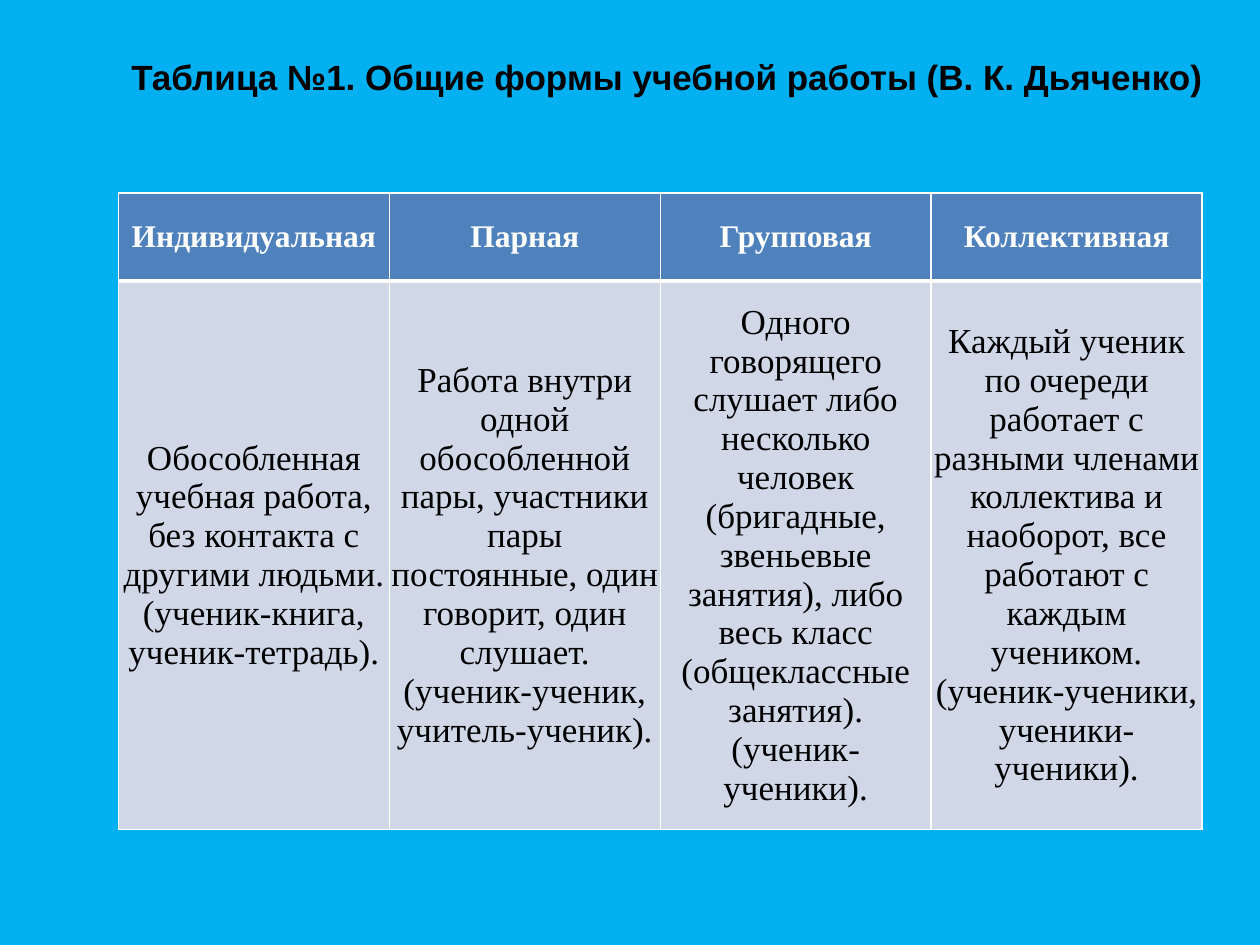
from lxml.etree import SubElement
from pptx import Presentation
from pptx.dml.color import RGBColor
from pptx.enum.text import MSO_ANCHOR, PP_ALIGN
from pptx.oxml.ns import qn
from pptx.util import Inches, Pt


def style(para, name, size, bold, color):
    para.alignment = PP_ALIGN.CENTER
    para.font.name = name
    para.font.size = Pt(size)
    para.font.bold = bold
    para.font.color.rgb = RGBColor.from_string(color)


def border(cell, side, width):
    line = SubElement(cell._tc.get_or_add_tcPr(), qn("a:" + side), w=str(Pt(width)))
    fill = SubElement(line, qn("a:solidFill"))
    SubElement(fill, qn("a:srgbClr"), val="FFFFFF")


forms = [
    ("Индивидуальная",
     "Обособленная учебная работа, без контакта с другими людьми.\n"
     "(ученик-книга, ученик-тетрадь)."),
    ("Парная",
     "Работа внутри одной обособленной пары, участники пары постоянные, "
     "один говорит, один слушает.\n(ученик-ученик, учитель-ученик)."),
    ("Групповая",
     "Одного говорящего слушает либо несколько человек (бригадные, звеньевые "
     "занятия), либо весь класс (общеклассные занятия).\n(ученик-ученики)."),
    ("Коллективная",
     "Каждый ученик по очереди работает с разными членами коллектива и наоборот, "
     "все работают с каждым учеником.\n(ученик-ученики, ученики-ученики)."),
]
looks = [
    (18, True, "FFFFFF", "4F81BD", {"lnL": 1, "lnR": 1, "lnT": 1, "lnB": 3}),
    (20, False, "000000", "D0D8E8", {"lnL": 1, "lnR": 1, "lnT": 3, "lnB": 1}),
]

deck = Presentation()
deck.slide_width = Inches(10)
deck.slide_height = Inches(7.5)
slide = deck.slides.add_slide(deck.slide_layouts[6])
slide.background.fill.solid()
slide.background.fill.fore_color.rgb = RGBColor.from_string("00B0F0")

box = slide.shapes.add_textbox(Inches(0.16), Inches(0.39), Inches(10), Inches(0.44))
title = box.text_frame
title.word_wrap = True
title.vertical_anchor = MSO_ANCHOR.MIDDLE
title.margin_left = Inches(0.37)
title.text = "Таблица №1. Общие формы учебной работы (В. К. Дьяченко)"
style(title.paragraphs[0], "Arial", 20, True, "000000")

frame = slide.shapes.add_table(
    2, len(forms), Inches(0.94), Inches(1.53), Inches(8.6), Inches(5.05))
table = frame.table
table.rows[0].height = Inches(0.7)
table.rows[1].height = Inches(4.35)

for col, texts in enumerate(forms):
    for row, (size, bold, color, back, edges) in enumerate(looks):
        cell = table.cell(row, col)
        cell.text = texts[row]
        cell.vertical_anchor = MSO_ANCHOR.MIDDLE
        cell.margin_left = cell.margin_right = Inches(0.01)
        cell.margin_top = cell.margin_bottom = Inches(0.01)
        for para in cell.text_frame.paragraphs:
            style(para, "Times New Roman", size, bold, color)
        for side, width in edges.items():
            border(cell, side, width)
        cell.fill.solid()
        cell.fill.fore_color.rgb = RGBColor.from_string(back)

deck.save("out.pptx")
